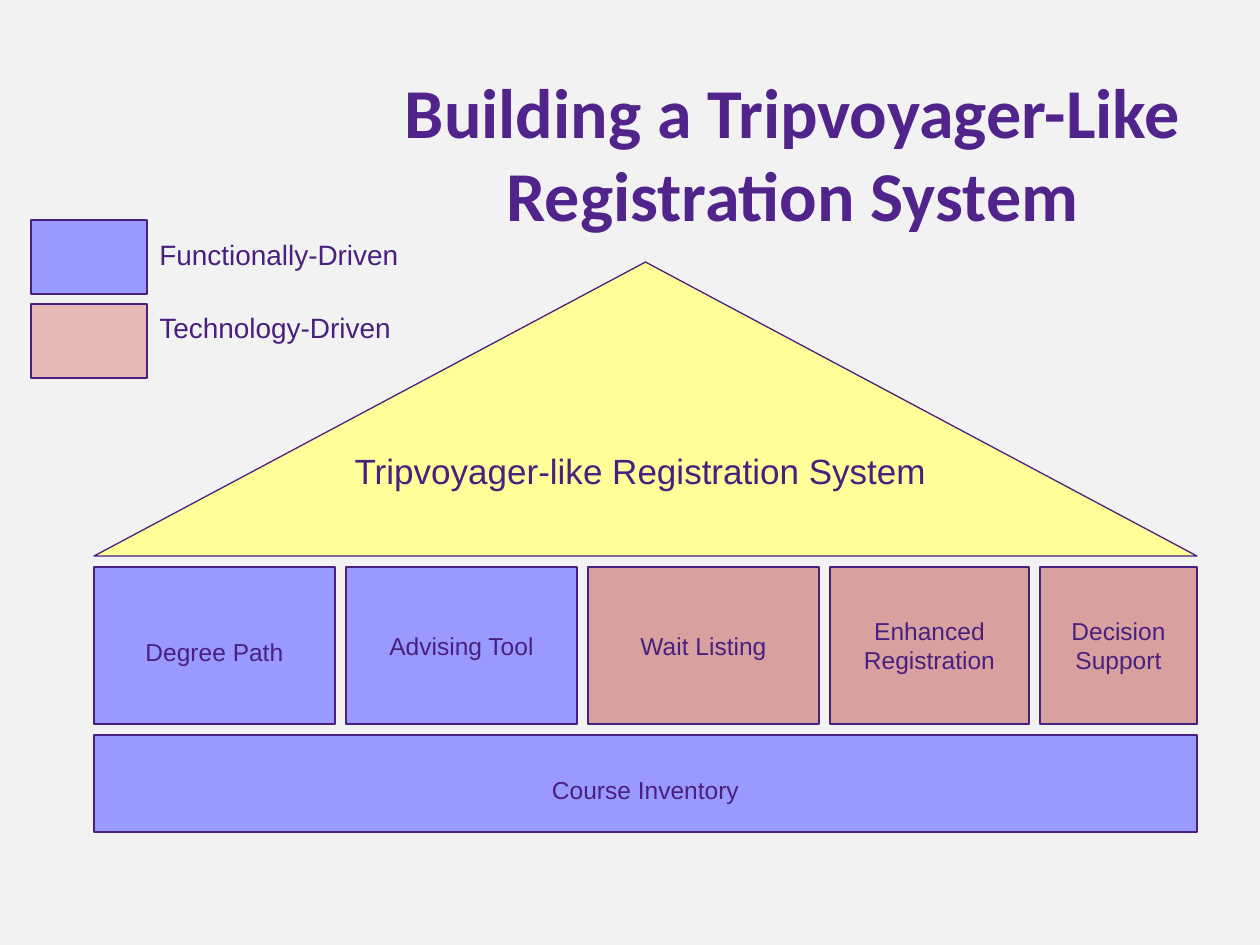
from pptx import Presentation
from pptx.dml.color import RGBColor
from pptx.enum.shapes import MSO_SHAPE
from pptx.enum.text import MSO_ANCHOR, MSO_AUTO_SIZE, PP_ALIGN
from pptx.oxml.ns import qn
from pptx.util import Pt
from lxml.etree import SubElement

PX = 914400 / 126
INK, BLUE, RED = "49207E", "9999FF", "C0504D"


def px(*vals):
    """Turn px into EMU."""
    return [round(v * PX) for v in vals]


def color(code):
    return RGBColor.from_string(code)


def paint(fill, code, alpha=100):
    """Set a solid fill, with alpha in percent."""
    fill.solid()
    fill.fore_color.rgb = color(code)
    if alpha < 100:
        node = fill.fore_color._xFill.find(qn("a:srgbClr"))
        SubElement(node, qn("a:alpha"), val=str(alpha * 1000))


def write(frame, text, size, align=PP_ALIGN.CENTER, face="Arial", ink=INK, bold=False):
    frame.word_wrap = True
    frame.text = text
    for par in frame.paragraphs:
        par.alignment = align
        font = par.font
        font.name, font.size, font.bold = face, Pt(size), bold
        font.color.rgb = color(ink)


def block(slide, box, code, text="", line=1, alpha=100, drop=0, kind=MSO_SHAPE.RECTANGLE):
    """Add an outlined shape; drop is extra space above its text."""
    shape = slide.shapes.add_shape(kind, *px(*box))
    shape.shadow.inherit = False
    paint(shape.fill, code, alpha)
    shape.line.color.rgb = color(INK)
    shape.line.width = Pt(line)
    if text:
        frame = shape.text_frame
        frame.vertical_anchor = MSO_ANCHOR.MIDDLE
        frame.margin_top = px(6 + drop)[0]
        write(frame, text, 14)


def label(slide, box, text, size, align):
    frame = slide.shapes.add_textbox(*px(*box)).text_frame
    write(frame, text, size, align)


def heading(slide):
    title = slide.shapes.title
    title.left, title.top, title.width, title.height = px(325, 73, 935, 158)
    frame = title.text_frame
    frame.auto_size = MSO_AUTO_SIZE.NONE
    frame.vertical_anchor = MSO_ANCHOR.MIDDLE
    write(frame, "Building a Tripvoyager-Like\vRegistration System", 40,
          face="Calibri", ink="51248C", bold=True)


def house(slide):
    """Draw the base, the roof and the row of pillars."""
    left, width, gap = 94, 1103, 11
    block(slide, (left, 735, width, 97), BLUE, "Course Inventory", line=1.5, drop=13)
    block(slide, (left, 262, width, 294), "FFFF99", line=0.75,
          kind=MSO_SHAPE.ISOSCELES_TRIANGLE)
    label(slide, (315, 443, 651, 55), "Tripvoyager-like Registration System", 20,
          PP_ALIGN.CENTER)
    pillars = [
        ("Degree Path", 241, BLUE, 100, 12),
        ("Advising Tool", 231, BLUE, 100, 0),
        ("Wait Listing", 231, RED, 50, 0),
        ("Enhanced Registration", 199, RED, 50, 0),
        ("Decision Support", 157, RED, 50, 0),
    ]
    for text, wide, code, alpha, drop in pillars:
        block(slide, (left, 567, wide, 157), code, text, alpha=alpha, drop=drop)
        left += wide + gap


def legend(slide):
    rows = [("Functionally-Driven", BLUE, 220, 231),
            ("Technology-Driven", "E6B9B8", 304, 304)]
    for text, code, top, line in rows:
        block(slide, (31, top, 116, 74), code, line=0.75)
        label(slide, (147, line, 294, 47), text, 16, PP_ALIGN.LEFT)


def main():
    deck = Presentation()
    deck.slide_width, deck.slide_height = px(1260, 945)
    slide = deck.slides.add_slide(deck.slide_layouts[5])
    paint(slide.background.fill, "F2F2F2")
    heading(slide)
    house(slide)
    legend(slide)
    deck.save("out.pptx")


if __name__ == "__main__":
    main()
